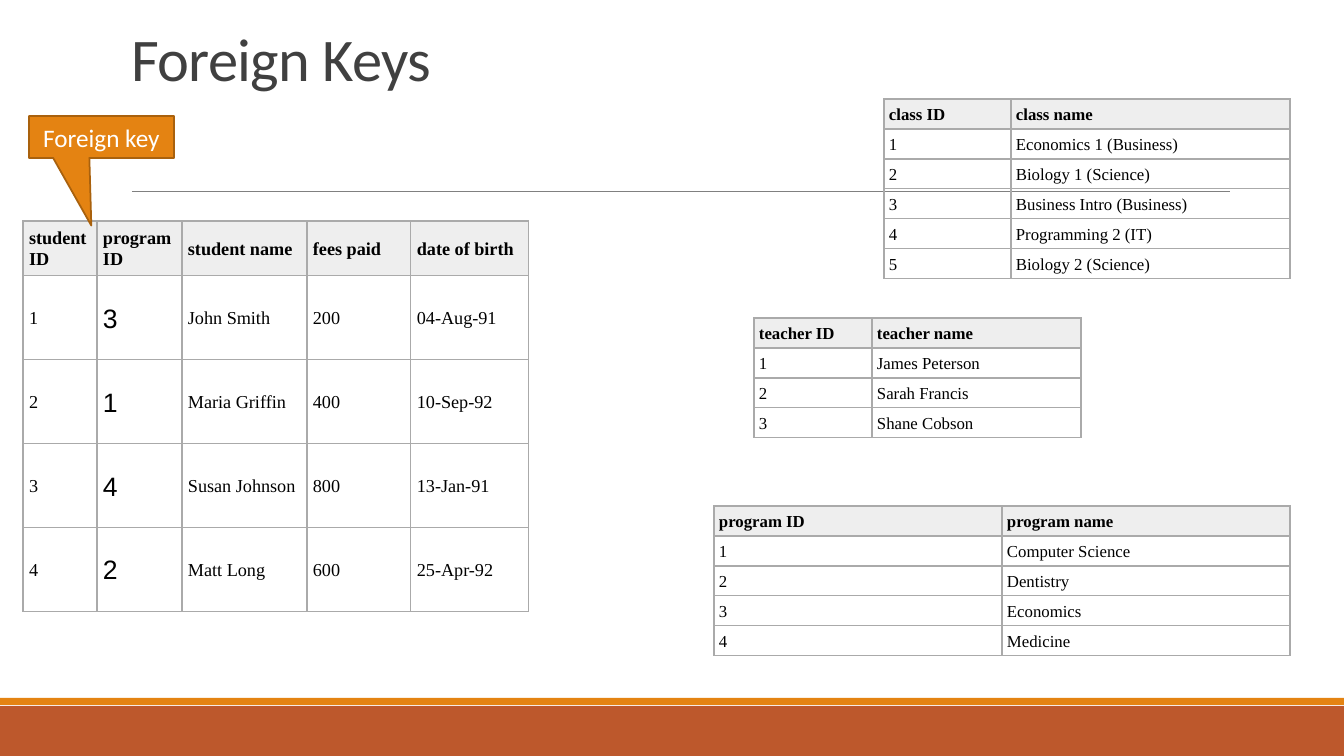
from lxml import etree
from pptx import Presentation
from pptx.dml.color import RGBColor
from pptx.enum.shapes import MSO_CONNECTOR, MSO_SHAPE
from pptx.enum.text import MSO_ANCHOR, MSO_AUTO_SIZE, PP_ALIGN
from pptx.oxml.ns import qn
from pptx.util import Emu, Pt

MIDDLE, BOTTOM = MSO_ANCHOR.MIDDLE, MSO_ANCHOR.BOTTOM
LEFT, CENTER = PP_ALIGN.LEFT, PP_ALIGN.CENTER
W, H = 1344, 756
COLORS = {"rust": "BD582C", "orange": "E48312", "edge": "A9610D", "rule": "808080",
          "grid": "AAAAAA", "header": "EEEEEE", "title": "404040",
          "black": "000000", "white": "FFFFFF"}

TITLE = "Foreign Keys"
CALLOUT = "Foreign key"
BARS = [("rust", 706, 50), ("orange", 698, 7)]  # colour, top, height
TABLES = [
    dict(at=(23, 221), cols=[74, 85, 125, 104, 118], heights=(38, 84),
         size=13, inset=6, key_col=1, rows=[
             ("student ID", "program ID", "student name", "fees paid", "date of birth"),
             ("1", "3", "John Smith", "200", "04-Aug-91"),
             ("2", "1", "Maria Griffin", "400", "10-Sep-92"),
             ("3", "4", "Susan Johnson", "800", "13-Jan-91"),
             ("4", "2", "Matt Long", "600", "25-Apr-92")]),
    dict(at=(754, 318), cols=[118, 209], rows=[
        ("teacher ID", "teacher name"),
        ("1", "James Peterson"),
        ("2", "Sarah Francis"),
        ("3", "Shane Cobson")]),
    dict(at=(884, 99), cols=[127, 279], rows=[
        ("class ID", "class name"),
        ("1", "Economics 1 (Business)"),
        ("2", "Biology 1 (Science)"),
        ("3", "Business Intro (Business)"),
        ("4", "Programming 2 (IT)"),
        ("5", "Biology 2 (Science)")]),
    dict(at=(714, 506), cols=[288, 288], rows=[
        ("program ID", "program name"),
        ("1", "Computer Science"),
        ("2", "Dentistry"),
        ("3", "Economics"),
        ("4", "Medicine")]),
]


def px(n):
    return Emu(round(n * 914400 / 100.8))


def rgb(name):
    return RGBColor.from_string(COLORS[name])


def style(p, size, font, color, bold=False):
    for r in p.runs:
        r.font.size, r.font.name, r.font.bold = Pt(size), font, bold
        r.font.color.rgb = rgb(color)


def add_box(s, kind, box, fill):
    sp = s.shapes.add_shape(kind, *map(px, box))
    sp.shadow.inherit = False
    sp.fill.solid()
    sp.fill.fore_color.rgb = rgb(fill)
    sp.line.fill.background()
    return sp


def add_borders(cell):
    tc_pr = cell._tc.get_or_add_tcPr()
    for side in ("lnL", "lnR", "lnT", "lnB"):
        ln = etree.SubElement(tc_pr, qn(f"a:{side}"), w=str(Pt(1)))
        fill = etree.SubElement(ln, qn("a:solidFill"))
        etree.SubElement(fill, qn("a:srgbClr"), val=COLORS["grid"])


def add_grid(s, at, cols, rows, heights=(30, 30), size=12, inset=5, key_col=None):
    """Add a table; key_col is the column whose values are set large in Arial."""
    row_heights = [heights[0]] + [heights[1]] * (len(rows) - 1)
    box = (*at, sum(cols), sum(row_heights))
    table = s.shapes.add_table(len(rows), len(cols), *map(px, box)).table
    table.first_row = table.horz_banding = False
    for col, width in zip(table.columns, cols):
        col.width = px(width)
    for i, values in enumerate(rows):
        table.rows[i].height = px(row_heights[i])
        for j, value in enumerate(values):
            cell = table.cell(i, j)
            add_borders(cell)
            if i == 0:
                cell.fill.solid()
                cell.fill.fore_color.rgb = rgb("header")
            else:
                cell.fill.background()
            cell.vertical_anchor = MIDDLE
            cell.margin_left = cell.margin_right = px(inset)
            cell.margin_top = cell.margin_bottom = px(inset)
            p = cell.text_frame.paragraphs[0]
            p.text = value
            p.line_spacing, p.space_after = 1.07, Pt(18)
            if i and j == key_col:
                style(p, 19, "Arial", "black")
            else:
                style(p, size, "Times New Roman", "black", bold=i == 0)


def add_title(s):
    sp = s.shapes.title
    sp.left, sp.top, sp.width, sp.height = map(px, (121, 31, 1109, 68))
    tf = sp.text_frame
    tf.text = TITLE
    tf.auto_size, tf.vertical_anchor = MSO_AUTO_SIZE.NONE, BOTTOM
    p = tf.paragraphs[0]
    p.alignment, p.line_spacing = LEFT, 0.85
    style(p, 43.2, "Calibri", "title")
    p.runs[0].font._element.set("spc", "-50")


def add_rule(s):
    line = s.shapes.add_connector(MSO_CONNECTOR.STRAIGHT, px(132), px(191), px(1230), px(191))
    line.line.color.rgb, line.line.width = rgb("rule"), Pt(0.5)
    etree.SubElement(line._element.spPr, qn("a:effectLst"))


def add_callout(s):
    sp = add_box(s, MSO_SHAPE.RECTANGULAR_CALLOUT, (29, 116, 145, 42), "orange")
    sp.adjustments[0], sp.adjustments[1] = -0.07, 2.11
    sp.line.color.rgb, sp.line.width = rgb("edge"), Pt(1.25)
    tf = sp.text_frame
    tf.text = CALLOUT
    tf.vertical_anchor = MIDDLE
    p = tf.paragraphs[0]
    p.alignment = CENTER
    style(p, 18, "Calibri", "white")


def main():
    prs = Presentation()
    prs.slide_width, prs.slide_height = px(W), px(H)
    s = prs.slides.add_slide(prs.slide_layouts[5])
    for color, top, height in BARS:
        add_box(s, MSO_SHAPE.RECTANGLE, (0, top, W, height), color)
    add_rule(s)
    add_title(s)
    for table in TABLES:
        add_grid(s, **table)
    add_callout(s)
    prs.save("out.pptx")


if __name__ == "__main__":
    main()
